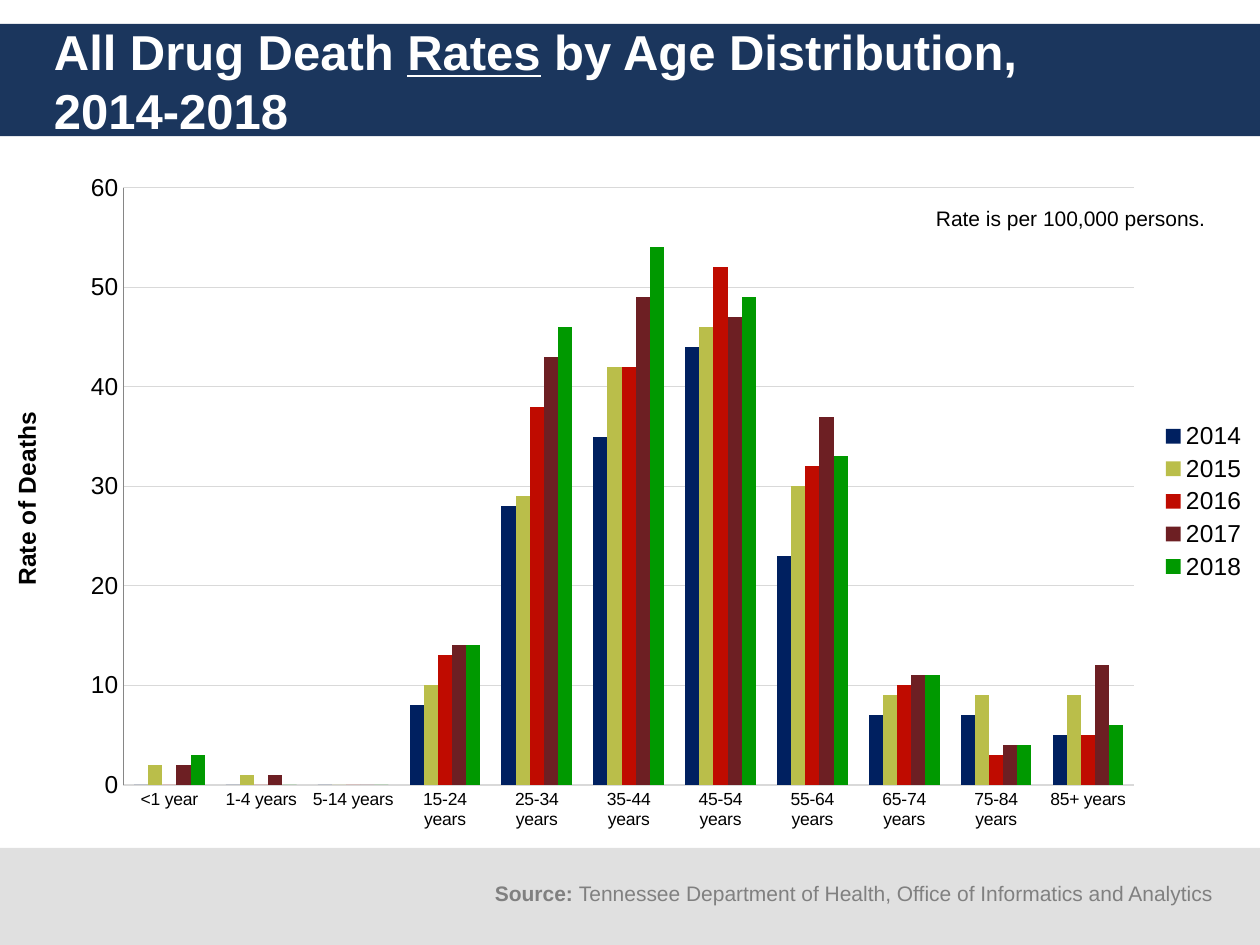
from lxml import etree
from pptx import Presentation
from pptx.chart.data import CategoryChartData
from pptx.dml.color import RGBColor
from pptx.enum.chart import XL_CHART_TYPE, XL_LEGEND_POSITION, XL_TICK_MARK
from pptx.enum.shapes import MSO_SHAPE
from pptx.enum.text import MSO_ANCHOR
from pptx.oxml.ns import qn
from pptx.util import Inches, Pt

COLUMNS = XL_CHART_TYPE.COLUMN_CLUSTERED
RIGHT = XL_LEGEND_POSITION.RIGHT
NO_TICK = XL_TICK_MARK.NONE
RECTANGLE = MSO_SHAPE.RECTANGLE
MIDDLE = MSO_ANCHOR.MIDDLE
TOP = MSO_ANCHOR.TOP

AGES = ["<1 year", "1-4 years", "5-14 years"] + [
    f"{start}-{start + 9} years" for start in range(15, 85, 10)
] + ["85+ years"]
RATES = {
    "2014": ("002060", [0, 0, 0, 8, 28, 35, 44, 23, 7, 7, 5]),
    "2015": ("BABE4A", [2, 1, 0, 10, 29, 42, 46, 30, 9, 9, 9]),
    "2016": ("BF0B00", [0, 0, 0, 13, 38, 42, 52, 32, 10, 3, 5]),
    "2017": ("6D1F23", [2, 1, 0, 14, 43, 49, 47, 37, 11, 4, 12]),
    "2018": ("009900", [3, 0, 0, 14, 46, 54, 49, 33, 11, 4, 6]),
}


def color(value):
    return RGBColor.from_string(value)


def format_font(font, size, ink="000000", bold=False, underline=False):
    font.name = "Arial"
    font.size = Pt(size)
    font.color.rgb = color(ink)
    font.bold = bold
    font.underline = underline


def add_span(para, text, **style):
    span = para.add_run()
    span.text = text
    format_font(span.font, **style)


def add_text(page, box, spans, size=12, ink="000000", anchor=TOP):
    frame = page.shapes.add_textbox(*map(Inches, box)).text_frame
    frame.word_wrap = True
    frame.vertical_anchor = anchor
    para = frame.paragraphs[0]
    for text, style in spans:
        add_span(para, text, size=size, ink=ink, **style)
    return para


def add_band(page, box, fill):
    band = page.shapes.add_shape(RECTANGLE, *map(Inches, box))
    band.shadow.inherit = False
    band.fill.solid()
    band.fill.fore_color.rgb = color(fill)
    band.line.fill.background()


def add_header(page, box):
    left, top, width, height = box
    add_band(page, box, "1B365D")
    bold = {"bold": True}
    para = add_text(
        page,
        (left + 0.33, top, width - 0.33, height + 0.01),
        [("All Drug Death ", bold),
         ("Rates", {"bold": True, "underline": True}),
         (" by Age Distribution, ", bold)],
        size=28, ink="FFFFFF", anchor=MIDDLE,
    )
    para.add_line_break()
    add_span(para, "2014-2018", size=28, ink="FFFFFF", bold=True)


def add_footer(page, box):
    left, top, width, height = box
    add_band(page, box, "E0E0E0")
    add_text(
        page,
        (left + 3.83, top + 0.21, 6, 0.3),
        [("Source: ", {"bold": True}),
         ("Tennessee Department of Health, Office of Informatics and Analytics", {})],
        ink="808080",
    )


def set_layout(element, index, **settings):
    layout = element.find(qn("c:layout"))
    if layout is not None:
        element.remove(layout)
    layout = etree.Element(qn("c:layout"))
    element.insert(index, layout)
    manual = etree.SubElement(layout, qn("c:manualLayout"))
    for name, value in settings.items():
        etree.SubElement(manual, qn(f"c:{name}")).set("val", str(value))


def style_axis(axis, size, line):
    axis.major_tick_mark = NO_TICK
    axis.minor_tick_mark = NO_TICK
    format_font(axis.tick_labels.font, size)
    axis.format.line.color.rgb = color(line)
    axis.format.line.width = Pt(0.75)


def add_rate_chart(page, box):
    left, top, width, height = box
    data = CategoryChartData(number_format="0")
    data.categories = AGES
    for year, (fill, values) in RATES.items():
        data.add_series(year, values)
    chart = page.shapes.add_chart(COLUMNS, *map(Inches, box), data).chart
    format_font(chart.font, 10)
    chart.has_title = False

    plot = chart.plots[0]
    plot.gap_width = 150
    plot.overlap = 0
    plot.vary_by_categories = False
    for series in plot.series:
        series.invert_if_negative = False
        series.format.fill.solid()
        series.format.fill.fore_color.rgb = color(RATES[series.name][0])

    style_axis(chart.category_axis, 10, "D9D9D9")
    rates = chart.value_axis
    style_axis(rates, 14, "868686")
    rates.minimum_scale = 0
    rates.maximum_scale = 60
    rates.major_unit = 10
    rates.major_gridlines.format.line.color.rgb = color("D9D9D9")
    rates.major_gridlines.format.line.width = Pt(0.75)
    add_span(rates.axis_title.text_frame.paragraphs[0], "Rate of Deaths", size=14, bold=True)

    chart.has_legend = True
    chart.legend.position = RIGHT
    chart.legend.include_in_layout = False
    format_font(chart.legend.font, 14)

    plot_area = chart.element.chart.plotArea
    edges = {"xMode": "edge", "yMode": "edge"}
    set_layout(plot_area, 0, layoutTarget="inner", **edges,
               x=0.98 / width, y=0.22 / height, w=8.02 / width, h=4.74 / height)
    set_layout(plot_area.find(".//" + qn("c:title")), 1, **edges,
               x=0.05 / width, y=1.96 / height)


def add_rate_slide(deck):
    page = deck.slides.add_slide(deck.slide_layouts[6])
    add_header(page, (0, 0.19, 10, 0.89))
    add_footer(page, (0, 6.73, 10, 0.77))
    add_rate_chart(page, (0, 1.27, 10, 5.42))
    add_text(page, (7.33, 1.58, 3, 0.3), [("Rate is per 100,000 persons.", {})])


def main():
    deck = Presentation()
    deck.slide_width = Inches(10)
    deck.slide_height = Inches(7.5)
    add_rate_slide(deck)
    deck.save("out.pptx")


if __name__ == "__main__":
    main()
